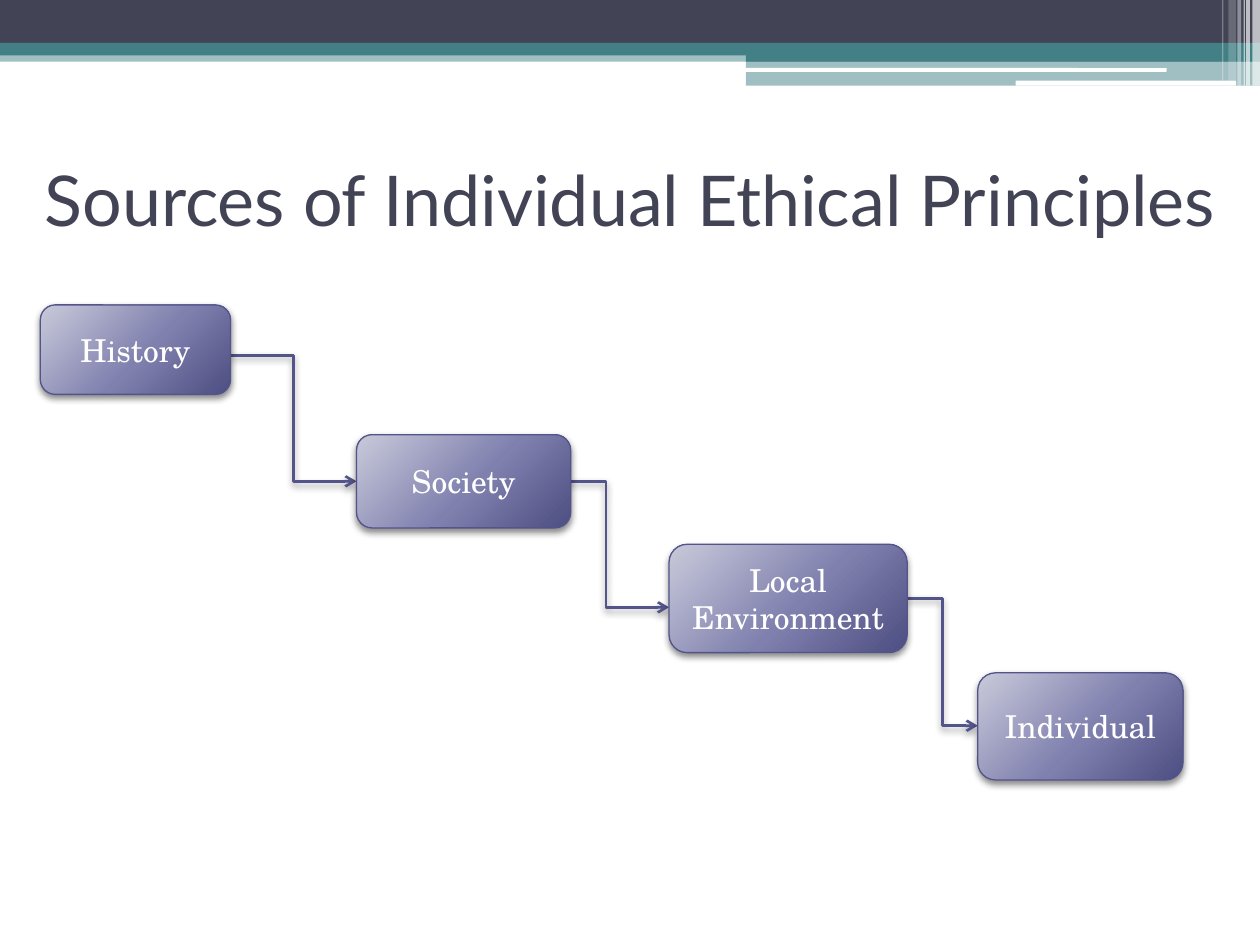
from dataclasses import dataclass

from pptx import Presentation
from pptx import util as u
from pptx.dml.color import RGBColor
from pptx.enum import shapes, text
from pptx.oxml import parse_xml
from pptx.oxml.ns import nsdecls, qn


@dataclass(frozen=True)
class Theme:
    dark: str = "424456"
    teal: str = "438086"
    white: str = "FFFFFF"
    outline: str = "53548A"
    gradient: tuple = ((0, "C9C9DA"), (55, "7F80AE"), (100, "4D4E81"))
    title_font: str = "Lato"
    box_font: str = "TeX Gyre Schola"
    title_size: int = 40
    box_size: int = 18


THEME = Theme()


@dataclass(frozen=True)
class Band:
    left: float
    top: float
    width: float
    height: float
    color: str
    opacity: int = 100
    rounded: bool = False


@dataclass(frozen=True)
class Step:
    label: str
    left: float
    top: float
    width: float
    height: float


@dataclass(frozen=True)
class Link:
    x1: float
    y1: float
    x2: float
    y2: float


BANDS = [
    Band(0, 0.4, 10, 0.09, THEME.teal, 50),
    Band(0, 0, 10, 0.34, THEME.dark),
    Band(0, 0.34, 10, 0.1, THEME.teal),
    Band(5.92, 0.39, 4.08, 0.1, THEME.teal),
    Band(5.92, 0.48, 4.08, 0.2, THEME.teal, 50),
    Band(5.91, 0.54, 3.35, 0.03, THEME.white, rounded=True),
    Band(8.06, 0.64, 1.75, 0.04, THEME.white, rounded=True),
    Band(9.94, 0, 0.06, 0.68, THEME.white, 65),
    Band(9.89, 0, 0.03, 0.68, THEME.white, 65),
    Band(9.87, 0, 0.01, 0.68, THEME.white, 60),
    Band(9.82, 0, 0.03, 0.68, THEME.white, 40),
    Band(9.75, 0, 0.06, 0.64, THEME.white, 20),
    Band(9.7, 0, 0.01, 0.64, THEME.white, 30),
]

STEPS = [
    Step("History", 0.32, 2.42, 1.51, 0.71),
    Step("Society", 2.83, 3.45, 1.7, 0.74),
    Step("Local Environment", 5.31, 4.32, 1.89, 0.86),
    Step("Individual", 7.76, 5.34, 1.63, 0.85),
]

LINKS = [
    Link(1.83, 2.82, 2.83, 3.82),
    Link(4.31, 3.82, 5.31, 4.82),
    Link(7.2, 4.75, 7.76, 5.76),
]


def add_preset(slide, item: Band | Step, rounded: bool):
    kind = shapes.MSO_SHAPE.ROUNDED_RECTANGLE if rounded else shapes.MSO_SHAPE.RECTANGLE
    shape = slide.shapes.add_shape(kind, u.Inches(item.left), u.Inches(item.top),
                                   u.Inches(item.width), u.Inches(item.height))
    shape.shadow.inherit = False
    return shape


def add_band(slide, band: Band) -> None:
    shape = add_preset(slide, band, band.rounded)
    shape.line.fill.background()
    shape.fill.solid()
    shape.fill.fore_color.rgb = RGBColor.from_string(band.color)
    if band.opacity < 100:
        color = shape._element.spPr.find(qn("a:solidFill"))[0]
        color.append(parse_xml(f'<a:alpha {nsdecls("a")} val="{band.opacity * 1000}"/>'))


def set_outline(line, width: float) -> None:
    line.color.rgb = RGBColor.from_string(THEME.outline)
    line.width = u.Pt(width)


def set_shadow(properties, opacity: int, blur: float) -> None:
    """Replace any effect list with a soft black shadow falling downwards."""
    for effects in properties.findall(qn("a:effectLst")):
        properties.remove(effects)
    properties.append(parse_xml(
        f'<a:effectLst {nsdecls("a")}><a:outerShdw blurRad="{u.Pt(blur)}" dist="{u.Pt(2)}" '
        f'dir="5400000" rotWithShape="0"><a:srgbClr val="000000">'
        f'<a:alpha val="{opacity * 1000}"/></a:srgbClr></a:outerShdw></a:effectLst>'))


def set_radial_gradient(properties) -> None:
    stops = "".join(f'<a:gs pos="{position * 1000}"><a:srgbClr val="{color}"/></a:gs>'
                    for position, color in THEME.gradient)
    gradient = parse_xml(
        f'<a:gradFill {nsdecls("a")} rotWithShape="1"><a:gsLst>{stops}</a:gsLst>'
        f'<a:path path="circle"><a:fillToRect l="-40000" t="-90000" r="140000" b="190000"/>'
        f'</a:path></a:gradFill>')
    properties.find(qn("a:prstGeom")).addnext(gradient)


def write_text(shape, content: str, font: str, size: int, color: str) -> None:
    frame = shape.text_frame
    frame.word_wrap = True
    frame.vertical_anchor = text.MSO_ANCHOR.MIDDLE
    paragraph = frame.paragraphs[0]
    paragraph.alignment = text.PP_ALIGN.CENTER
    run = paragraph.add_run()
    run.text = content
    run.font.name = font
    run.font.size = u.Pt(size)
    run.font.color.rgb = RGBColor.from_string(color)


def add_step(slide, step: Step) -> None:
    shape = add_preset(slide, step, rounded=True)
    set_outline(shape.line, 0.75)
    set_radial_gradient(shape._element.spPr)
    set_shadow(shape._element.spPr, opacity=45, blur=4)
    write_text(shape, step.label, THEME.box_font, THEME.box_size, THEME.white)


def add_link(slide, link: Link) -> None:
    connector = slide.shapes.add_connector(
        shapes.MSO_CONNECTOR.ELBOW, u.Inches(link.x1), u.Inches(link.y1),
        u.Inches(link.x2), u.Inches(link.y2))
    set_outline(connector.line, 1.5)
    properties = connector._element.spPr
    properties.find(qn("a:ln")).append(parse_xml(f'<a:tailEnd {nsdecls("a")} type="arrow"/>'))
    set_shadow(properties, opacity=40, blur=4.1)


def main() -> None:
    presentation = Presentation()
    presentation.slide_width = u.Inches(10)
    presentation.slide_height = u.Inches(7.5)
    slide = presentation.slides.add_slide(presentation.slide_layouts[6])
    for band in BANDS:
        add_band(slide, band)
    for link in LINKS:
        add_link(slide, link)
    for step in STEPS:
        add_step(slide, step)
    title = slide.shapes.add_textbox(u.Inches(0), u.Inches(0.99), u.Inches(10), u.Inches(1.17))
    write_text(title, "Sources of Individual Ethical Principles",
               THEME.title_font, THEME.title_size, THEME.dark)
    presentation.save("out.pptx")


if __name__ == "__main__":
    main()
